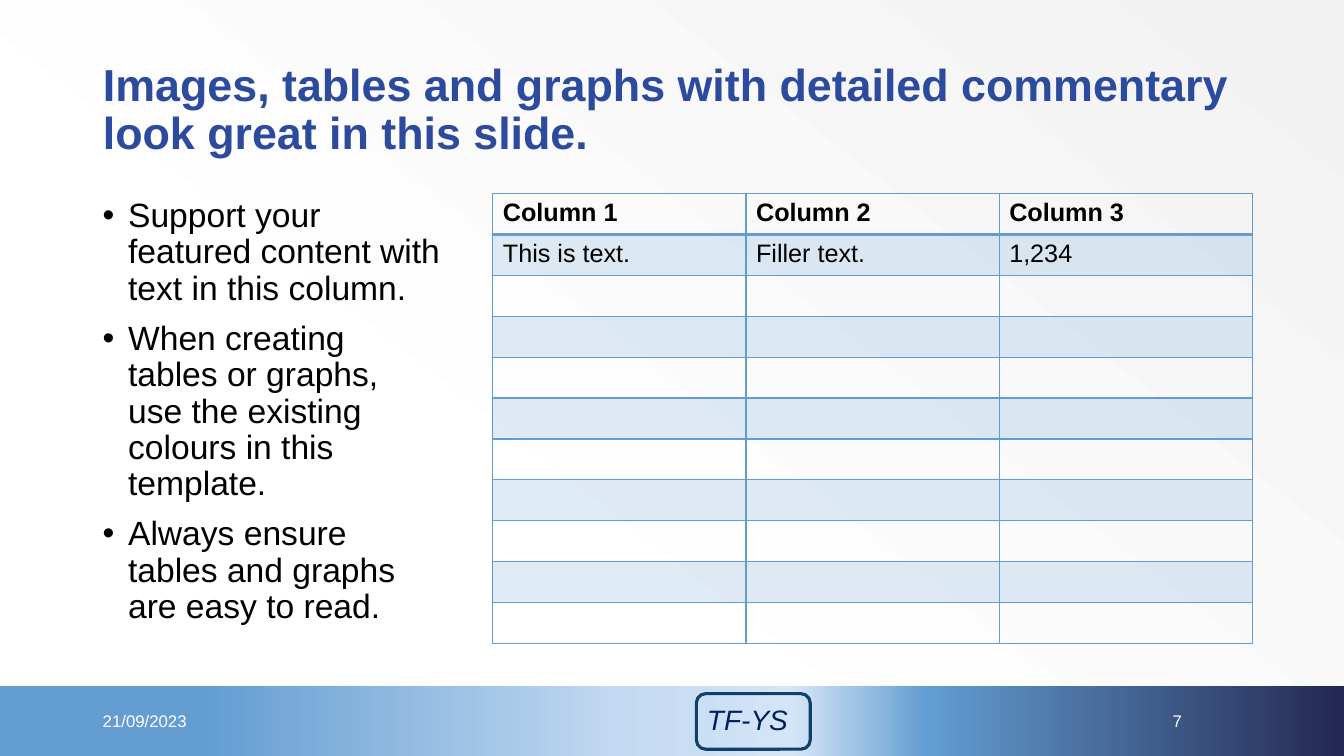
from dataclasses import dataclass

from lxml.etree import SubElement
from pptx import Presentation
from pptx.dml.color import RGBColor
from pptx.enum.shapes import MSO_SHAPE
from pptx.enum.text import MSO_ANCHOR, MSO_AUTO_SIZE, PP_ALIGN
from pptx.oxml.ns import qn
from pptx.util import Cm, Pt


@dataclass(frozen=True)
class Theme:
    font: str = "Arial"
    title: str = "2C4A9E"
    text: str = "000000"
    footer: str = "FFFFFF"
    accent: str = "629DD1"
    badge_line: str = "143F6A"
    badge_text: str = "002060"
    title_size: int = 32
    body_size: int = 24
    badge_size: int = 20
    table_size: int = 18
    footer_size: int = 12
    tint: int = 20
    backdrop: tuple = ((0, "F2F2F2"), (70, "FFFFFF"))
    band: tuple = (
        (15, "639DD2"),
        (46, "C2D9F1"),
        (59, "D4E5F7"),
        (69, "629DD1"),
        (100, "242852"),
    )


THEME = Theme()
COLUMNS = 3
ROWS = 11
TABLE_TEXT = [
    ["Column 1", "Column 2", "Column 3"],
    ["This is text.", "Filler text.", "1,234"],
]
TITLE = "Images, tables and graphs with detailed commentary look great in this slide."
BULLETS = [
    "Support your featured content with text in this column.",
    "When creating tables or graphs, use the existing colours in this template.",
    "Always ensure tables and graphs are easy to read.",
]


def apply(target, values):
    for name, value in values.items():
        setattr(target, name, value)


def place(item, left, top, width, height):
    sides = {"left": left, "top": top, "width": width, "height": height}
    apply(item, {name: Cm(value) for name, value in sides.items()})


def style_font(font, size, color, **extra):
    apply(font, {"name": THEME.font, "size": Pt(size), **extra})
    font.color.rgb = RGBColor.from_string(color)


def write(frame, lines, size, color, paragraph_format=None, bullet=False, **extra):
    apply(frame, {"word_wrap": True, "auto_size": MSO_AUTO_SIZE.NONE})
    for index, line in enumerate(lines):
        para = frame.paragraphs[0] if index == 0 else frame.add_paragraph()
        if bullet:
            add_bullet(para)
        apply(para, paragraph_format or {})
        if bullet and index:
            para.space_before = Pt(10)
        span = para.add_run()
        span.text = line
        style_font(span.font, size, color, **extra)


def add_bullet(para):
    properties = para._p.get_or_add_pPr()
    properties.set("marL", str(Cm(0.64)))
    properties.set("indent", str(-Cm(0.64)))
    SubElement(properties, qn("a:buFont"), typeface=THEME.font)
    SubElement(properties, qn("a:buChar"), char="•")


def fill_gradient(fill, owner, stops, angle):
    fill.gradient()
    fill.gradient_angle = angle
    stop_list = next(owner.iter(qn("a:gsLst")))
    for stop in list(stop_list):
        stop_list.remove(stop)
    for position, color in stops:
        stop = SubElement(stop_list, qn("a:gs"), pos=str(position * 1000))
        SubElement(stop, qn("a:srgbClr"), val=color)


def add_text(page, bounds, lines, size, color, anchor=MSO_ANCHOR.MIDDLE, **options):
    box = page.shapes.add_textbox(*map(Cm, bounds))
    box.text_frame.vertical_anchor = anchor
    write(box.text_frame, lines, size, color, **options)


def add_title(page):
    title = page.shapes.title
    place(title, 2.34, 1.09, 29.21, 3.4)
    title.text_frame.vertical_anchor = MSO_ANCHOR.MIDDLE
    layout = {"line_spacing": 0.9, "alignment": PP_ALIGN.LEFT}
    write(title.text_frame, [TITLE], THEME.title_size, THEME.title, layout, bold=True)


def add_band(page):
    band = page.shapes.add_shape(
        MSO_SHAPE.RECTANGLE, 0, Cm(17.28), Cm(33.87), Cm(1.77)
    )
    band.shadow.inherit = False
    band.line.fill.background()
    fill_gradient(band.fill, band.element, THEME.band, 0)


def add_badge(page):
    badge = page.shapes.add_shape(
        MSO_SHAPE.ROUNDED_RECTANGLE, Cm(17.55), Cm(17.48), Cm(2.87), Cm(1.4)
    )
    badge.shadow.inherit = False
    badge.fill.background()
    badge.line.width = Pt(2.25)
    badge.line.color.rgb = RGBColor.from_string(THEME.badge_line)
    frame = badge.text_frame
    apply(frame, {"vertical_anchor": MSO_ANCHOR.MIDDLE, "margin_left": Cm(0.2)})
    layout = {"alignment": PP_ALIGN.LEFT, "line_spacing": 0.9}
    write(frame, ["TF-YS"], THEME.badge_size, THEME.badge_text, layout, italic=True)


def set_borders(cell, widths):
    properties = cell._tc.get_or_add_tcPr()
    for index, (side, width) in enumerate(widths.items()):
        line = properties.makeelement(qn(f"a:ln{side}"), {"w": str(Pt(width))})
        solid = SubElement(line, qn("a:solidFill"))
        SubElement(solid, qn("a:srgbClr"), val=THEME.accent)
        properties.insert(index, line)


def fill_cell(cell, tinted):
    if not tinted:
        cell.fill.background()
        return
    cell.fill.solid()
    cell.fill.fore_color.rgb = RGBColor.from_string(THEME.accent)
    color = next(cell._tc.iter(qn("a:srgbClr")))
    SubElement(color, qn("a:alpha"), val=str(THEME.tint * 1000))


def add_data_table(page):
    column_width, row_height = 6.38, 1.03
    frame = page.shapes.add_table(
        ROWS, COLUMNS, Cm(12.42), Cm(4.88),
        Cm(column_width * COLUMNS), Cm(row_height * ROWS),
    )
    table = frame.table
    apply(table, {"first_row": False, "horz_banding": False})
    for column in table.columns:
        column.width = Cm(column_width)
    for row_index, row in enumerate(table.rows):
        row.height = Cm(row_height)
        for column_index, cell in enumerate(row.cells):
            fill_cell(cell, row_index % 2 == 1)
            set_borders(cell, {
                "L": 1,
                "R": 1,
                "T": 2 if row_index == 1 else 1,
                "B": 2 if row_index == 0 else 1,
            })
            if row_index < len(TABLE_TEXT):
                para = cell.text_frame.paragraphs[0]
                span = para.add_run()
                span.text = TABLE_TEXT[row_index][column_index]
                style_font(span.font, THEME.table_size, THEME.text, bold=row_index == 0)


def main():
    deck = Presentation()
    apply(deck, {"slide_width": Cm(33.87), "slide_height": Cm(19.05)})
    page = deck.slides.add_slide(deck.slide_layouts[5])
    fill_gradient(page.background.fill, page.element, THEME.backdrop, 232)
    add_band(page)
    add_badge(page)
    add_data_table(page)
    add_title(page)
    add_text(
        page, (2.34, 4.88, 9.04, 11.38), BULLETS, THEME.body_size, THEME.text,
        anchor=MSO_ANCHOR.TOP, paragraph_format={"line_spacing": 0.9}, bullet=True,
    )
    footer = (THEME.footer_size, THEME.footer)
    add_text(page, (2.34, 17.65, 6.55, 1.02), ["21/09/2023"], *footer)
    add_text(
        page, (26.26, 17.65, 3.78, 1.02), ["7"], *footer,
        paragraph_format={"alignment": PP_ALIGN.RIGHT},
    )
    deck.save("out.pptx")


if __name__ == "__main__":
    main()
